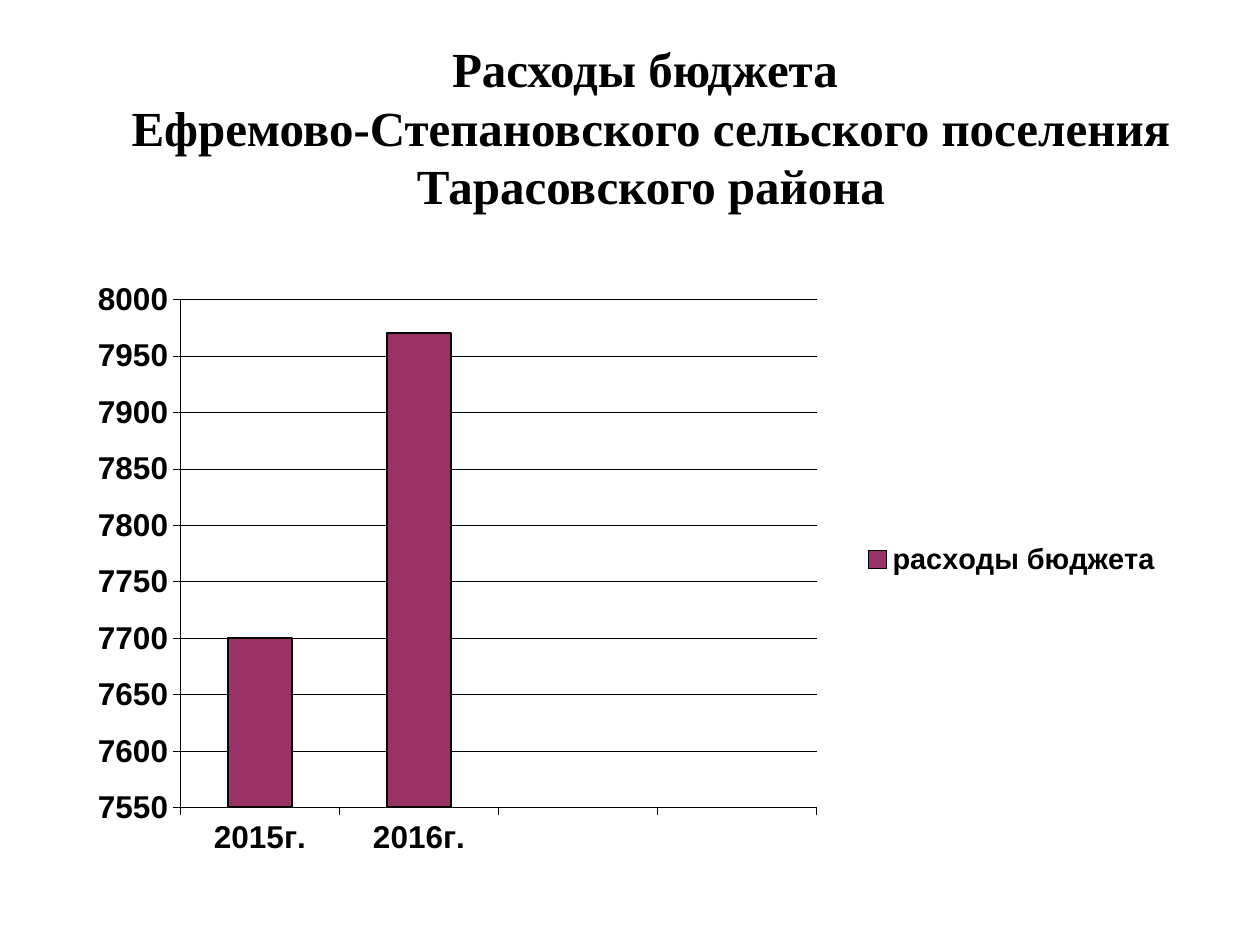
import lxml.etree
import pptx
import pptx.chart.data
import pptx.dml.color
import pptx.enum.chart
import pptx.enum.text
import pptx.oxml.ns
import pptx.util

BLACK = pptx.dml.color.RGBColor(0, 0, 0)
PLUM = pptx.dml.color.RGBColor(0x99, 0x33, 0x66)
PX_PER_INCH = 126


class BudgetSlide:
    """Style and current slide, with one method per kind of element."""

    def __init__(self, page):
        self.page = page
        self.title_font = "Times New Roman"
        self.chart_font = "Arial"

    def emu(self, *lengths):
        return [pptx.util.Emu(round(px * 914400 / PX_PER_INCH)) for px in lengths]

    def format_font(self, font, name, size):
        font.name = name
        font.size = pptx.util.Pt(size)
        font.bold = True
        font.color.rgb = BLACK

    def format_line(self, line, width):
        line.color.rgb = BLACK
        line.width = pptx.util.Pt(width)

    def title(self, lines, left, top, width, height):
        box = self.page.shapes.title
        box.left, box.top, box.width, box.height = self.emu(left, top, width, height)
        frame = box.text_frame
        frame.word_wrap = True
        frame.auto_size = pptx.enum.text.MSO_AUTO_SIZE.NONE
        frame.vertical_anchor = pptx.enum.text.MSO_ANCHOR.TOP
        frame.text = "\n".join(lines)
        for para in frame.paragraphs:
            para.alignment = pptx.enum.text.PP_ALIGN.CENTER
            para.line_spacing = 1.0
            para.space_before = pptx.util.Pt(0)
            self.format_font(para.font, self.title_font, 28)

    def place(self, parent, index, **settings):
        tag = pptx.oxml.ns.qn
        for old in parent.findall(tag("c:layout")):
            parent.remove(old)
        layout = lxml.etree.Element(tag("c:layout"))
        manual = lxml.etree.SubElement(layout, tag("c:manualLayout"))
        for name, value in settings.items():
            lxml.etree.SubElement(manual, tag(f"c:{name}")).set("val", str(value))
        parent.insert(index, layout)

    def axis(self, axis):
        self.format_font(axis.tick_labels.font, self.chart_font, 18)
        self.format_line(axis.format.line, 0.25)
        axis.major_tick_mark = pptx.enum.chart.XL_TICK_MARK.OUTSIDE
        axis.minor_tick_mark = pptx.enum.chart.XL_TICK_MARK.NONE

    def column_chart(self, name, categories, values, left, top, width, height):
        data = pptx.chart.data.CategoryChartData()
        data.categories = categories
        data.add_series(name, values)
        kind = pptx.enum.chart.XL_CHART_TYPE.COLUMN_CLUSTERED
        frame = self.page.shapes.add_chart(
            kind, *self.emu(left, top, width, height), data)
        chart = frame.chart
        chart.has_title = False
        self.format_font(chart.font, self.chart_font, 18)

        self.axis(chart.category_axis)
        chart.category_axis.tick_label_position = (
            pptx.enum.chart.XL_TICK_LABEL_POSITION.LOW)
        scale = chart.value_axis
        self.axis(scale)
        scale.minimum_scale, scale.maximum_scale, scale.major_unit = 7550, 8000, 50
        scale.tick_labels.number_format = "General"
        scale.tick_labels.number_format_is_linked = False
        self.format_line(scale.major_gridlines.format.line, 0.25)

        plot = chart.plots[0]
        plot.gap_width = 150
        plot.vary_by_categories = False
        column = plot.series[0].format
        column.fill.solid()
        column.fill.fore_color.rgb = PLUM
        self.format_line(column.line, 1)

        chart.has_legend = True
        legend = chart.legend
        legend.position = pptx.enum.chart.XL_LEGEND_POSITION.RIGHT
        legend.include_in_layout = False
        self.format_font(legend.font, self.chart_font, 16.5)
        area = chart.element.find(".//" + pptx.oxml.ns.qn("c:plotArea"))
        self.place(area, 0, layoutTarget="inner", xMode="edge", yMode="edge",
                   x=0.09, y=0.04, w=0.57, h=0.83)
        key = chart.element.find(".//" + pptx.oxml.ns.qn("c:legend"))
        self.place(key, 1, xMode="edge", yMode="edge", x=0.7, y=0.43, w=0.27, h=0.07)


def main():
    deck = pptx.Presentation()
    deck.slide_width = pptx.util.Inches(10)
    deck.slide_height = pptx.util.Inches(7.5)
    slide = BudgetSlide(deck.slides.add_slide(deck.slide_layouts[5]))
    slide.title(
        ["Расходы бюджета ", "Ефремово-Степановского сельского поселения",
         "Тарасовского района"], 84, 32, 1134, 241)
    slide.column_chart(
        "расходы бюджета", ["2015г.", "2016г.", "", ""], [7700, 7970, None, None],
        80, 275, 1116, 612)
    deck.save("out.pptx")


if __name__ == "__main__":
    main()
